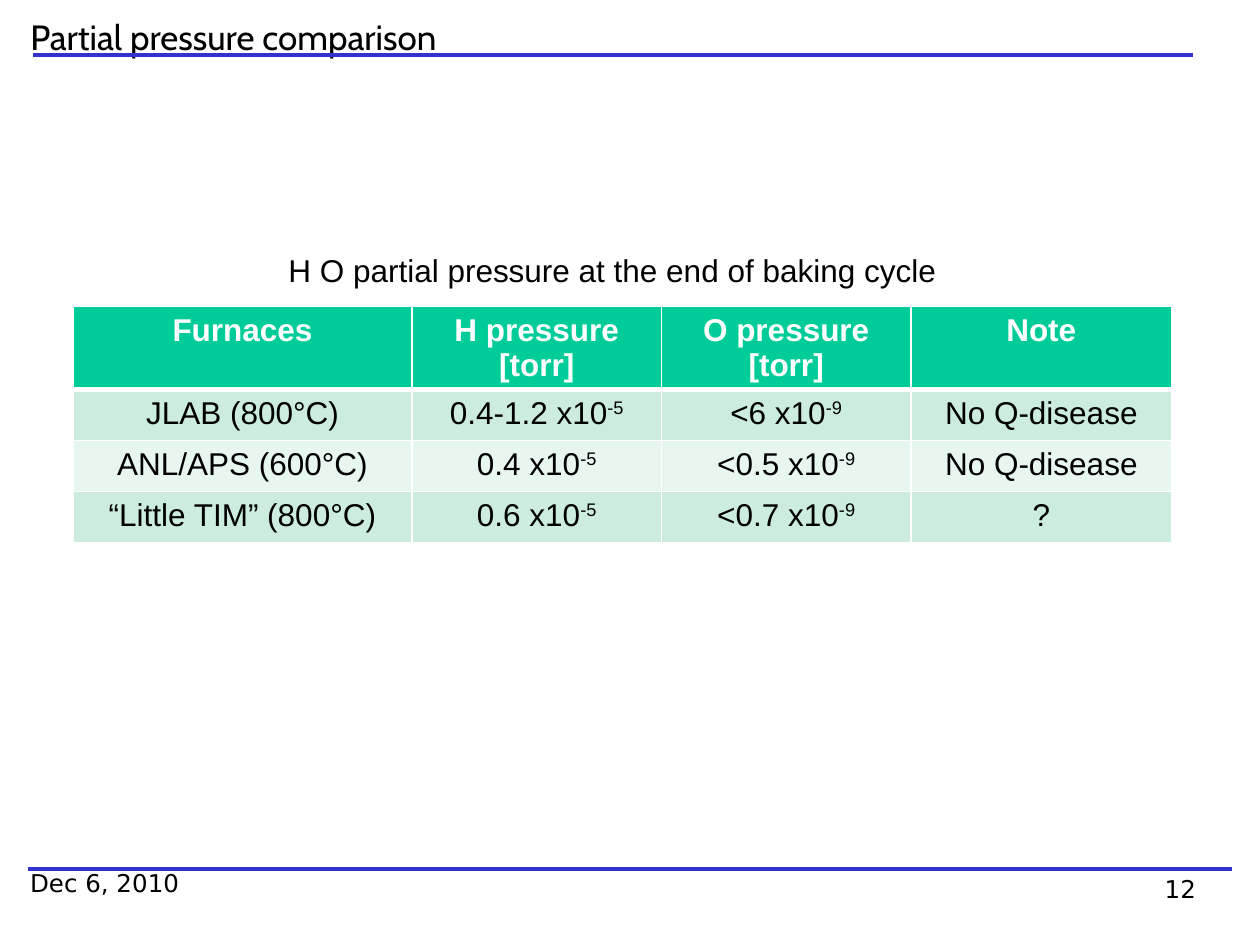
from dataclasses import dataclass

from lxml import etree
from pptx import Presentation, util as u
from pptx.dml.color import RGBColor
from pptx.enum import shapes, text
from pptx.oxml import ns


@dataclass(frozen=True)
class Theme:
    ink: str = "000000"
    paper: str = "FFFFFF"
    rule: str = "3333CC"
    header: str = "00CC99"
    bands: tuple = ("CCECDE", "E7F6EF")
    heading: tuple = ("Cabin", 20)
    body: tuple = ("Arial", 18)
    footer: tuple = ("DejaVu Sans", 14)
    rule_width: float = 2.25
    border: float = 1
    header_border: float = 3


class SlideBuilder:
    COLUMNS, ROWS = 100, 75

    def __init__(self, deck, theme):
        self.deck, self.theme = deck, theme
        self.page = deck.slides.add_slide(deck.slide_layouts[5])

    def across(self, columns):
        return round(self.deck.slide_width * columns / self.COLUMNS)

    def down(self, rows):
        return round(self.deck.slide_height * rows / self.ROWS)

    def area(self, left, top, width, height):
        return self.across(left), self.down(top), self.across(width), self.down(height)

    def apply(self, target, values):
        for name, value in values.items():
            setattr(target, name, value)

    def fill_text(self, frame, parts, face, color=None, align=text.PP_ALIGN.LEFT, bold=False):
        para = frame.paragraphs[0]
        para.alignment = align
        family, size = face
        for index, part in enumerate(parts):
            span = para.add_run()
            span.text = part
            self.apply(span.font, {"name": family, "size": u.Pt(size), "bold": bold})
            span.font.color.rgb = RGBColor.from_string(color or self.theme.ink)
            if index % 2:
                span.font._element.set("baseline", "30000")

    def title(self, words, area):
        box = self.page.shapes.title
        self.apply(box, dict(zip(("left", "top", "width", "height"), self.area(*area))))
        self.apply(box.text_frame, {"vertical_anchor": text.MSO_ANCHOR.MIDDLE, "word_wrap": True})
        self.fill_text(box.text_frame, [words], self.theme.heading)

    def label(self, words, area, face, align=text.PP_ALIGN.LEFT):
        box = self.page.shapes.add_textbox(*self.area(*area))
        box.text_frame.word_wrap = True
        self.fill_text(box.text_frame, [words], face, align=align)

    def rule(self, start, end, row):
        line = self.page.shapes.add_connector(
            shapes.MSO_CONNECTOR.STRAIGHT,
            self.across(start), self.down(row), self.across(end), self.down(row))
        line.line.color.rgb = RGBColor.from_string(self.theme.rule)
        line.line.width = u.Pt(self.theme.rule_width)
        etree.SubElement(line._element.spPr, ns.qn("a:effectLst"))

    def borders(self, cell, widths):
        props = cell._tc.get_or_add_tcPr()
        for index, (side, width) in enumerate(widths.items()):
            edge = etree.Element(ns.qn(f"a:ln{side}"), w=str(u.Pt(width)))
            fill = etree.SubElement(edge, ns.qn("a:solidFill"))
            etree.SubElement(fill, ns.qn("a:srgbClr"), val=self.theme.paper)
            props.insert(index, edge)

    def table(self, records, left, top, widths, heights):
        theme = self.theme
        area = self.area(left, top, sum(widths), sum(heights))
        grid = self.page.shapes.add_table(len(records), len(widths), *area).table
        grid.horz_banding = False
        for column, width in zip(grid.columns, widths):
            column.width = self.across(width)
        for row, height in zip(grid.rows, heights):
            row.height = self.down(height)
        for r, record in enumerate(records):
            head = r == 0
            fill = theme.header if head else theme.bands[(r - 1) % 2]
            edges = dict.fromkeys("LRTB", theme.border)
            if r < 2:
                edges["B" if head else "T"] = theme.header_border
            for c, entry in enumerate(record):
                cell = grid.cell(r, c)
                cell.fill.solid()
                cell.fill.fore_color.rgb = RGBColor.from_string(fill)
                self.borders(cell, edges)
                self.fill_text(cell.text_frame, entry.split("^"), theme.body,
                               theme.paper if head else theme.ink,
                               text.PP_ALIGN.CENTER, head)


def main():
    deck = Presentation()
    deck.slide_width, deck.slide_height = u.Inches(10), u.Inches(7.5)
    theme = Theme()
    slide = SlideBuilder(deck, theme)

    slide.rule(2.6, 94.7, 4.4)
    slide.rule(2.2, 97.8, 69)
    slide.title("Partial pressure comparison", (1.4, 0, 83.6, 5.8))
    furnaces = [
        ("Furnaces", "H pressure [torr]", "O pressure [torr]", "Note"),
        ("JLAB (800°C)", "0.4-1.2 x10^-5", "<6 x10^-9", "No Q-disease"),
        ("ANL/APS (600°C)", "0.4 x10^-5", "<0.5 x10^-9", "No Q-disease"),
        ("“Little TIM” (800°C)", "0.6 x10^-5", "<0.7 x10^-9", "?"),
    ]
    slide.table(furnaces, 5.8, 24.3, (26.9, 19.8, 19.8, 20.7), (6.6, 4.05, 4.05, 4.05))
    slide.label("Dec 6, 2010", (1.4, 68.4, 20.8, 5), theme.footer)
    slide.label("12", (75.1, 68.9, 20.8, 5), theme.footer, text.PP_ALIGN.RIGHT)
    slide.label("H O partial pressure at the end of baking cycle",
                (21.9, 19.4, 55.9, 4), theme.body)

    deck.save("out.pptx")


if __name__ == "__main__":
    main()
